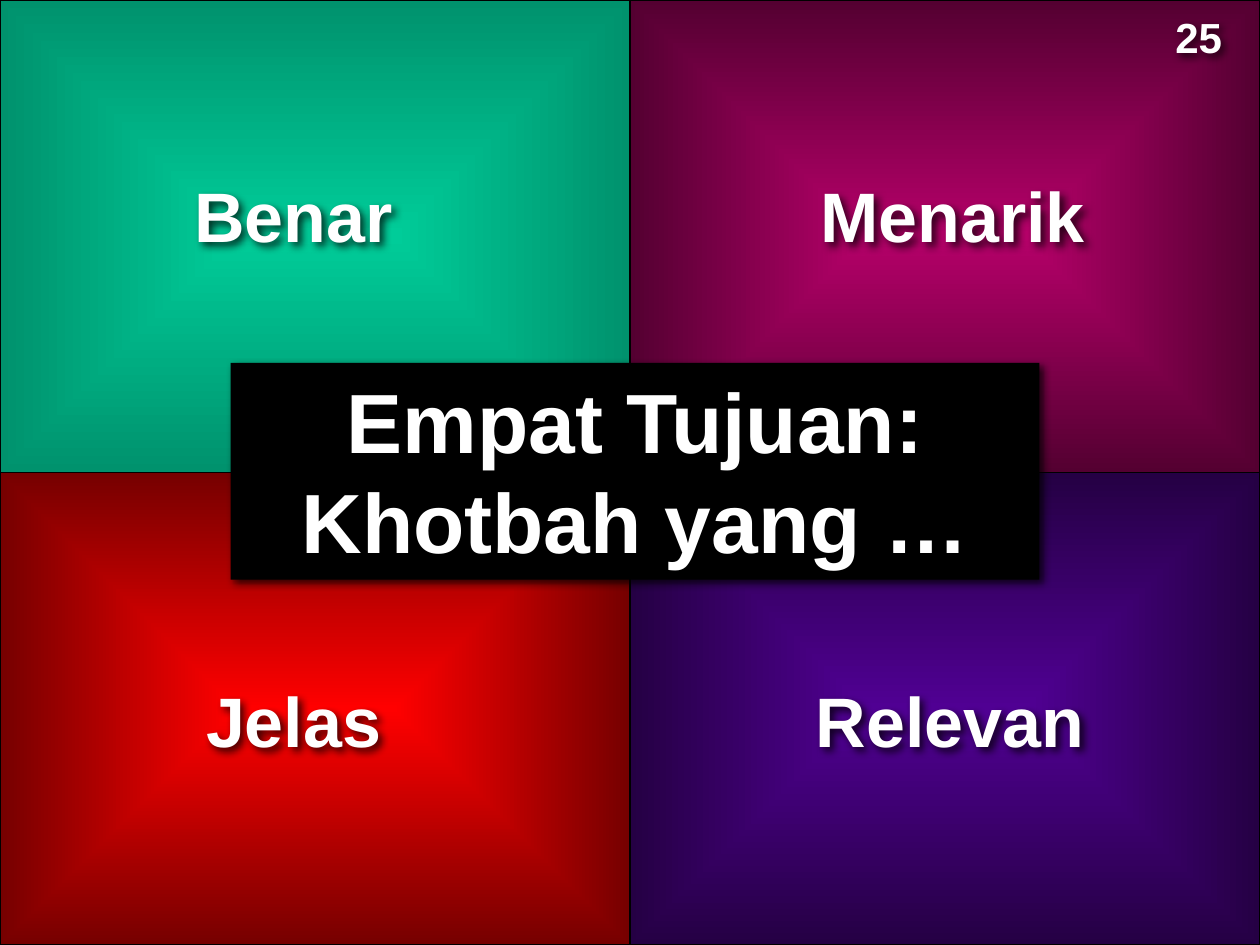
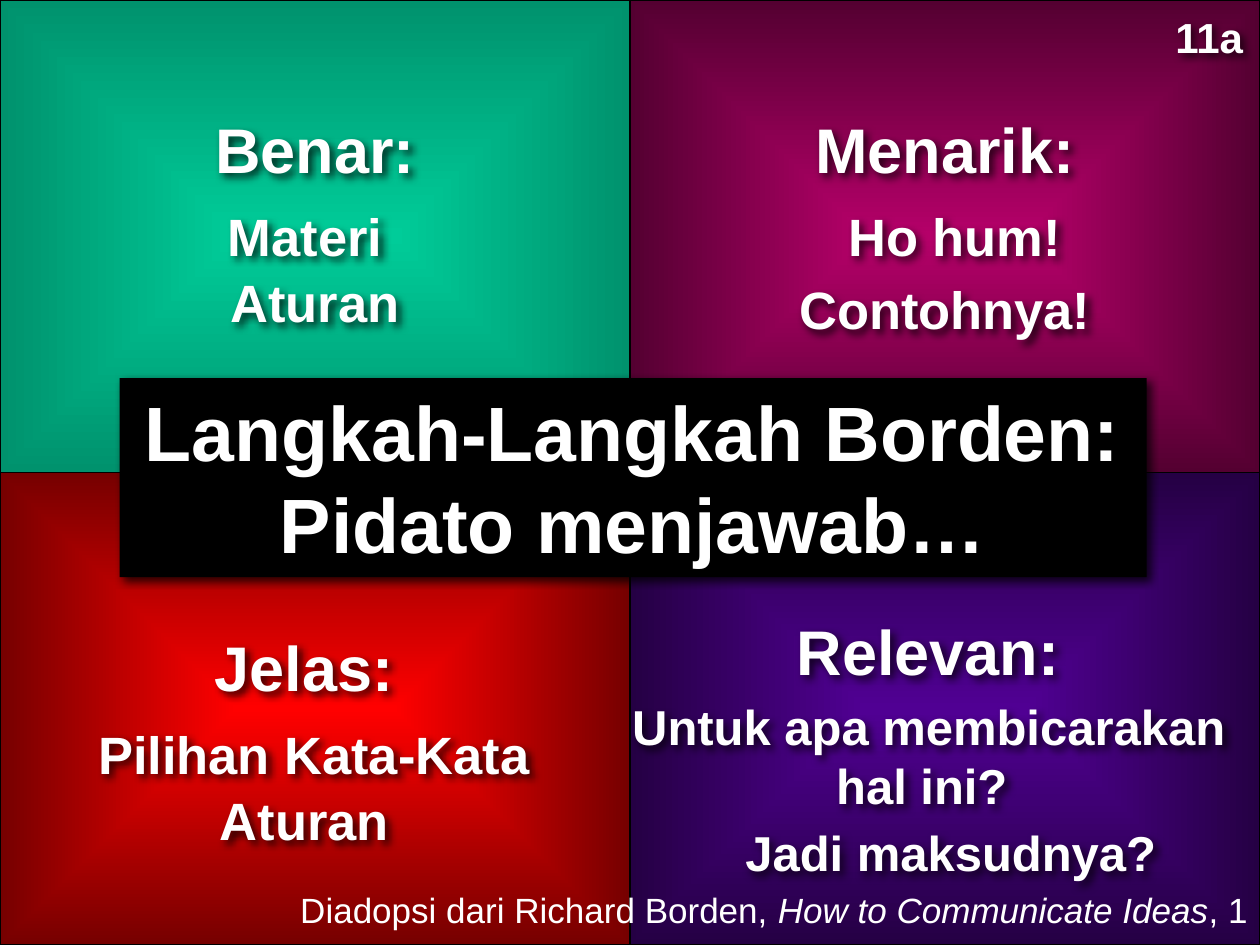
from lxml import etree
from pptx import Presentation
from pptx.dml.color import RGBColor
from pptx.enum.shapes import MSO_SHAPE
from pptx.enum.text import MSO_ANCHOR, MSO_AUTO_SIZE, PP_ALIGN
from pptx.oxml import parse_xml
from pptx.oxml.ns import nsdecls, qn
from pptx.util import Inches, Pt

# Shared style
W, H = 10, 7.5
FONT, WHITE, BLACK = "Arial", "FFFFFF", "000000"
QUADRANTS = [  # centre and edge colours, row by row
    ("00CC99", "00926D"), ("B50069", "540031"),
    ("FF0000", "760000"), ("500093", "250044"),
]


def rgb(color):
    return RGBColor.from_string(color)


def add_shadow(sp):
    """Soft black shadow, 3 pt towards the lower right."""
    sp._element.spPr.append(parse_xml(
        f'<a:effectLst {nsdecls("a")}><a:outerShdw blurRad="{Pt(5)}" dist="{Pt(3)}" '
        f'dir="2700000" algn="tl" rotWithShape="0"><a:srgbClr val="{BLACK}">'
        '<a:alpha val="75000"/></a:srgbClr></a:outerShdw></a:effectLst>'))


def add_rect(s, x, y, w, h):
    sp = s.shapes.add_shape(MSO_SHAPE.RECTANGLE, *map(Inches, (x, y, w, h)))
    sp.shadow.inherit = False
    return sp


def add_quadrants(s):
    w, h = W / 2, H / 2
    for i, colors in enumerate(QUADRANTS):
        row, col = divmod(i, 2)
        sp = add_rect(s, col * w, row * h, w, h)
        sp.line.color.rgb = rgb(BLACK)
        sp.line.width = Pt(1)
        sp.fill.gradient()
        for stop, color, position in zip(sp.fill.gradient_stops, colors, (0, 1)):
            stop.color.rgb = rgb(color)
            stop.position = position
        # Radiate from the centre instead of along a line
        grad = sp._element.spPr.find(qn("a:gradFill"))
        grad.remove(grad.find(qn("a:lin")))
        center = etree.SubElement(grad, qn("a:path"), {"path": "shape"})
        etree.SubElement(center, qn("a:fillToRect"), dict.fromkeys("ltrb", "50000"))


def write(sp, runs, align=PP_ALIGN.CENTER, bold=True):
    """Fill a shape with (text, size[, italic]) runs; a newline breaks the line."""
    tf = sp.text_frame
    frame = {"word_wrap": True, "auto_size": MSO_AUTO_SIZE.SHAPE_TO_FIT_TEXT,
             "vertical_anchor": MSO_ANCHOR.TOP}
    for name, value in frame.items():
        setattr(tf, name, value)
    p = tf.paragraphs[0]
    p.alignment = align
    if align == PP_ALIGN.CENTER:
        before = etree.SubElement(p._p.get_or_add_pPr(), qn("a:spcBef"))
        etree.SubElement(before, qn("a:spcPct"), {"val": "50000"})
    for text, size, *italic in runs:
        for i, line in enumerate(text.split("\n")):
            if i:
                p.add_line_break()
            if line:
                r = p.add_run()
                r.text = line
                font = {"name": FONT, "size": Pt(size), "bold": bold, "italic": bool(italic)}
                for name, value in font.items():
                    setattr(r.font, name, value)
                r.font.color.rgb = rgb(WHITE)


def add_text(s, x, y, w, h, runs, shadow=True, **style):
    sp = s.shapes.add_textbox(*map(Inches, (x, y, w, h)))
    write(sp, runs, **style)
    if shadow:
        add_shadow(sp)


def add_title(s, x, y, w, h, text, size):
    sp = add_rect(s, x, y, w, h)
    sp._element.spPr.remove(sp._element.spPr.find(qn("a:effectLst")))
    sp.fill.solid()
    sp.fill.fore_color.rgb = rgb(BLACK)
    sp.line.fill.background()
    add_shadow(sp)
    write(sp, [(text, size)])


def add_slide(prs, title_box, title, title_size, number):
    s = prs.slides.add_slide(prs.slide_layouts[6])
    s.background.fill.solid()
    s.background.fill.fore_color.rgb = rgb(BLACK)
    add_quadrants(s)
    add_title(s, *title_box, title, title_size)
    add_text(s, 9.23, 0.04, 0.77, 0.5, [(number, 24)], align=PP_ALIGN.LEFT)
    return s


def build_goals(prs):
    s = add_slide(prs, (1.83, 2.88, 6.42, 1.72), "Empat Tujuan:\nKhotbah yang …", 48, "25")
    goals = [("Benar", 1.29, 1.32, 2.08), ("Menarik", 5.75, 1.32, 3.62),
             ("Jelas", 0.83, 5.33, 3), ("Relevan", 6.04, 5.33, 3)]
    for goal, x, y, w in goals:
        add_text(s, x, y, w, 0.77, [(goal, 40)])


def build_steps(prs):
    s = add_slide(prs, (0.95, 3, 8.15, 1.58),
                  "Langkah-Langkah Borden:\nPidato menjawab…", 44, "11a")
    steps = [
        (0, 0.83, 5, 1.95,
         [("Benar:\n", 36), ("Materi", 30), (" \n", 40), ("Aturan", 30)]),
        (5, 0.83, 5, 1.43, [("Menarik:\n", 36), (" ", 40), ("Ho hum!", 30)]),
        (5, 2.15, 5, 0.61, [("Contohnya!", 30)]),
        (-0.17, 4.94, 5.17, 1.89,
         [("Jelas:\n", 36), (" ", 40), ("Pilihan Kata-Kata", 30), (" ", 40), ("Aturan", 30)]),
        (4.74, 4.81, 5.25, 0.71, [("Relevan:", 36)]),
        (4.63, 5.48, 5.48, 1.04, [("Untuk apa membicarakan hal ini? ", 28)]),
        (4.92, 6.48, 5.25, 0.57, [("Jadi maksudnya?", 28)]),
    ]
    for step in steps:
        add_text(s, *step)
    # Source credit
    add_text(s, 0.83, 7, 9.17, 0.44,
             [("Diadopsi dari Richard Borden, ", 20),
              ("How to Communicate Ideas", 20, "italic"), (", 1", 20)],
             shadow=False, align=PP_ALIGN.RIGHT, bold=False)


def main():
    prs = Presentation()
    prs.slide_width, prs.slide_height = Inches(W), Inches(H)
    build_goals(prs)
    build_steps(prs)
    prs.save("out.pptx")


if __name__ == "__main__":
    main()
